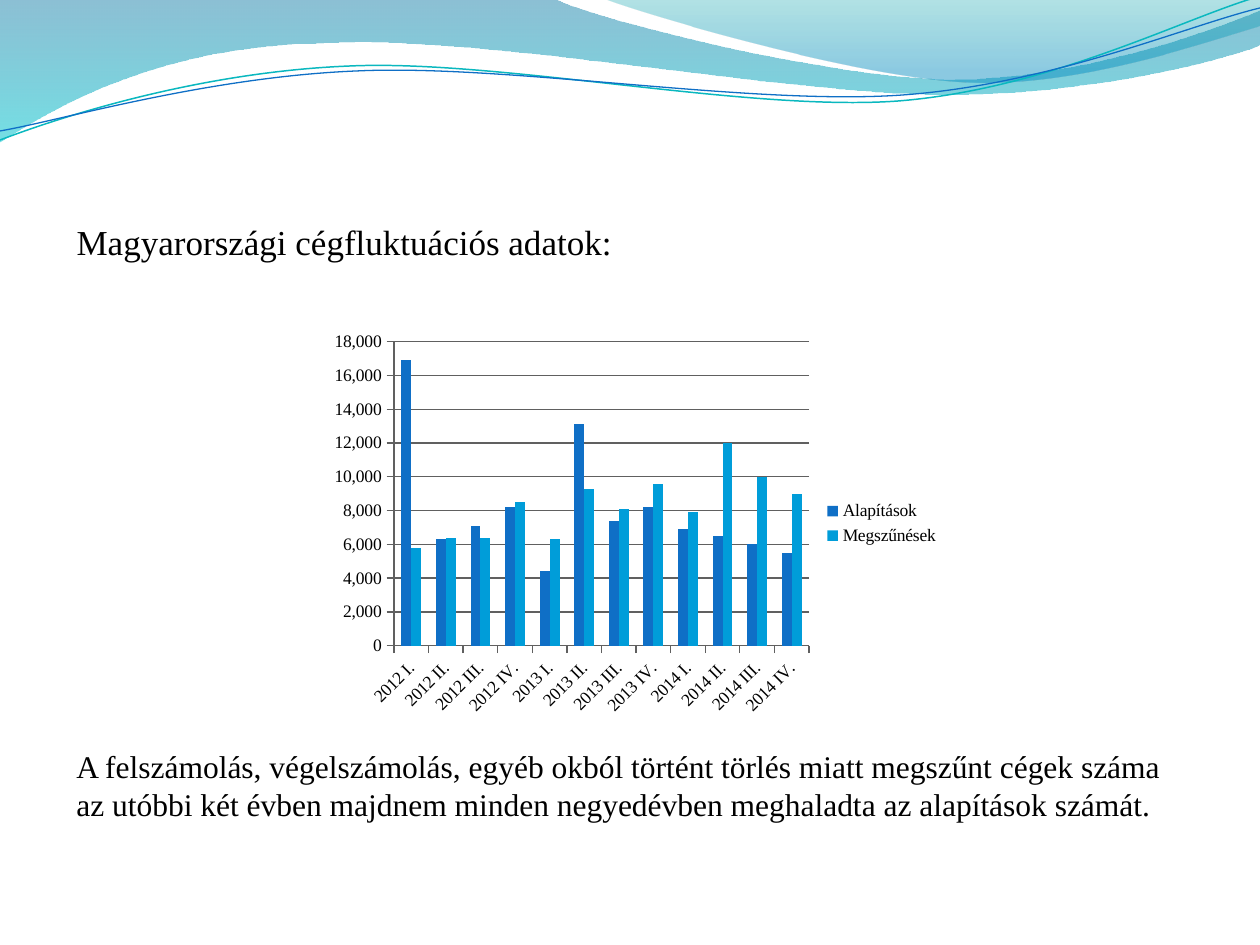
from pptx import Presentation
from pptx.chart.data import CategoryChartData as ChartData
from pptx.dml.color import RGBColor
from pptx.enum.chart import XL_CHART_TYPE as ChartType, XL_LEGEND_POSITION as LegendPosition
from pptx.enum.chart import XL_TICK_MARK as TickMark
from pptx.enum.text import MSO_AUTO_SIZE as AutoSize
from pptx.oxml.ns import qn
from pptx.util import Pt
from lxml.etree import SubElement

PX = 914400 / 126
BLACK = RGBColor(0x00, 0x00, 0x00)
GREY = RGBColor(0x60, 0x60, 0x60)
BLUE = RGBColor(0x0F, 0x6F, 0xC6)
SKY = RGBColor(0x00, 0x9D, 0xD9)
TEAL = RGBColor(0x0A, 0xB8, 0xBF)
DEEP_BLUE = RGBColor(0x00, 0x74, 0xA1)
AQUA = RGBColor(0x00, 0xC6, 0xCF)
SEA_GREEN = RGBColor(0x00, 0xA1, 0xA9)
OCEAN = RGBColor(0x00, 0x8B, 0xBF)

BACK_WAVE = [[(0, 0)], [(554, -1)], [(600, 21), (837, 79), (955, 79)],
             [(1074, 79), (1207, 33), (1260, 11)], [(1261, 45)],
             [(1239, 55), (1096, 96), (940, 94)], [(784, 94), (481, 35), (324, 43)],
             [(163, 45), (58, 105), (-1, 142)], [(0, 0)]]
FRONT_WAVE = [[(604, -1)], [(641, 14), (859, 78), (969, 82)],
              [(1079, 87), (1211, 40), (1260, 26)], [(1260, 0)], [(604, -1)]]
TEAL_LINE = [[(0, 140)], [(60, 117), (199, 72), (349, 66)],
             [(498, 59), (747, 112), (898, 101)], [(1049, 89), (1182, 19), (1257, -3)]]
BLUE_LINE = [[(0, 131)], [(59, 121), (207, 77), (357, 71)],
             [(508, 64), (752, 106), (903, 95)], [(1053, 84), (1186, 26), (1260, 8)]]

QUARTERS = [f"{year} {quarter}." for year in (2012, 2013, 2014)
            for quarter in ("I", "II", "III", "IV")]
FOUNDED = [16900, 6300, 7100, 8200, 4400, 13100, 7400, 8200, 6900, 6500, 6000, 5500]
CLOSED = [5800, 6400, 6400, 8500, 6300, 9300, 8100, 9600, 7900, 12000, 10000, 9000]


def px(*lengths):
    """Turn px lengths into EMU."""
    return [round(length * PX) for length in lengths]


class Deck:
    """Holds the style and the current slide."""

    font = "Times New Roman"

    def __init__(self, width, height):
        self.presentation = Presentation()
        self.presentation.slide_width, self.presentation.slide_height = px(width, height)
        self.slide = self.presentation.slides.add_slide(self.presentation.slide_layouts[1])
        title = self.slide.shapes.title
        title.element.getparent().remove(title.element)

    def style(self, font, size):
        font.name, font.size, font.color.rgb = self.font, Pt(size), BLACK

    def curve(self, segments, close):
        start, *points = [px(*point) for segment in segments for point in segment]
        builder = self.slide.shapes.build_freeform(*start)
        builder.add_line_segments(points, close=close)
        shape = builder.convert_to_shape()
        shape.shadow.inherit = False
        sides = iter(list(shape.element.spPr.iter(qn("a:lnTo"))))
        for segment in segments[1:]:
            corners = [next(sides) for _ in segment]
            if len(corners) == 3:
                bend = SubElement(corners[0].getparent(), qn("a:cubicBezTo"))
                corners[0].addprevious(bend)
                for corner in corners:
                    bend.append(corner[0])
                    corner.getparent().remove(corner)
        return shape

    def wave(self, segments, stops):
        shape = self.curve(segments, True)
        shape.line.fill.background()
        shape.fill.gradient()
        shape.fill.gradient_angle = 270
        for stop, (position, color, _) in zip(shape.fill.gradient_stops, stops):
            stop.position, stop.color.rgb = position, color
        for tag, (_, _, opacity) in zip(shape.element.spPr.iter(qn("a:srgbClr")), stops):
            SubElement(tag, qn("a:alpha"), val=str(opacity * 1000))

    def stroke(self, segments, color, width):
        shape = self.curve(segments, False)
        shape.fill.background()
        shape.line.color.rgb, shape.line.width = color, Pt(width)

    def body(self, text, left, top, width, height, size):
        body = self.slide.placeholders[1]
        body.left, body.top, body.width, body.height = px(left, top, width, height)
        body.text_frame.text = text
        paragraph = body.text_frame.paragraphs[0]
        properties = paragraph._p.get_or_add_pPr()
        indent, = px(38)
        properties.set("marL", str(indent))
        properties.set("indent", str(-indent))
        SubElement(properties, qn("a:buNone"))
        self.style(paragraph.runs[0].font, size)

    def note(self, text, left, top, width, height, size):
        frame = self.slide.shapes.add_textbox(*px(left, top, width, height)).text_frame
        frame.word_wrap = True
        frame.auto_size = AutoSize.SHAPE_TO_FIT_TEXT
        frame.text = text
        self.style(frame.paragraphs[0].runs[0].font, size)

    def columns(self, categories, series, left, top, width, height, size):
        data = ChartData(number_format="#,##0")
        data.categories = categories
        for name, values, _ in series:
            data.add_series(name, values)
        chart = self.slide.shapes.add_chart(
            ChartType.COLUMN_CLUSTERED, *px(left, top, width, height), data).chart
        self.style(chart.font, size)
        chart.has_title = False
        chart.has_legend = True
        chart.legend.position = LegendPosition.RIGHT
        chart.legend.include_in_layout = False
        plot = chart.plots[0]
        plot.vary_by_categories, plot.gap_width, plot.overlap = False, 150, 0
        for column, (_, _, color) in zip(plot.series, series):
            column.format.fill.solid()
            column.format.fill.fore_color.rgb = color
        for axis in (chart.category_axis, chart.value_axis):
            axis.major_tick_mark = TickMark.OUTSIDE
            axis.format.line.color.rgb = GREY
            self.style(axis.tick_labels.font, size)
        quarters, counts = chart.category_axis, chart.value_axis
        quarters._element.find(qn("c:txPr")).find(qn("a:bodyPr")).set("rot", "-2700000")
        counts.minimum_scale, counts.maximum_scale, counts.major_unit = 0, 18000, 2000
        counts.major_gridlines.format.line.color.rgb = GREY


def main():
    deck = Deck(1260, 945)
    deck.wave(BACK_WAVE, [(0, DEEP_BLUE, 45), (1, AQUA, 55)])
    deck.wave(FRONT_WAVE, [(0, SEA_GREEN, 30), (0.8, OCEAN, 45)])
    deck.stroke(TEAL_LINE, TEAL, 0.85)
    deck.stroke(BLUE_LINE, BLUE, 0.75)
    deck.body("Magyarországi cégfluktuációs adatok:", 64, 214, 1134, 664, 20)
    deck.columns(QUARTERS, [("Alapítások", FOUNDED, BLUE), ("Megszűnések", CLOSED, SKY)],
                 322, 324, 630, 399, 10)
    deck.note("A felszámolás, végelszámolás, egyéb okból történt törlés miatt megszűnt "
              "cégek száma az utóbbi két évben majdnem minden negyedévben meghaladta "
              "az alapítások számát.", 64, 741, 1142, 89, 18)
    deck.presentation.save("out.pptx")


if __name__ == "__main__":
    main()
